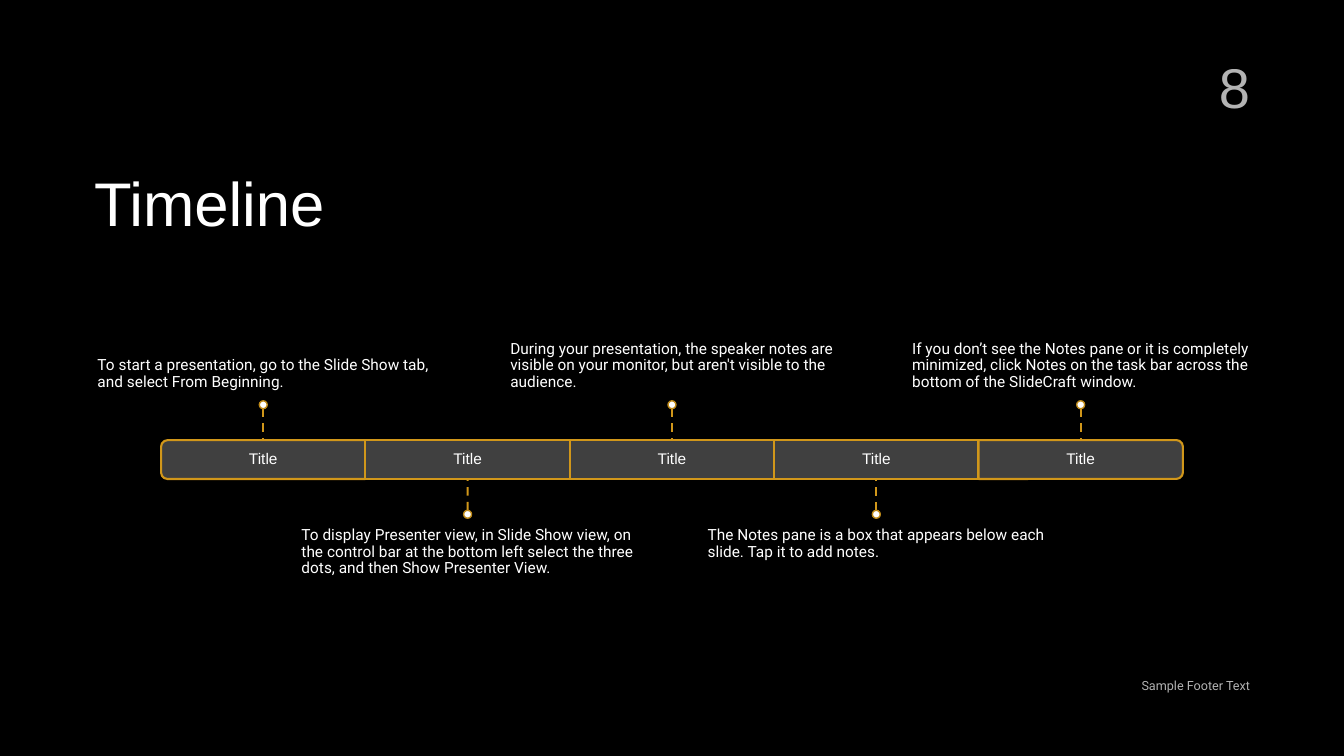
from lxml.etree import SubElement
from pptx import Presentation
from pptx.dml.color import RGBColor
from pptx.enum.dml import MSO_LINE_DASH_STYLE as Dash
from pptx.enum.shapes import MSO_CONNECTOR as Connector, MSO_SHAPE as Shape
from pptx.enum.text import MSO_ANCHOR as Anchor, PP_ALIGN as Align
from pptx.oxml.ns import qn
from pptx.util import Cm, Pt

COLORS = {
    "background": "000000",
    "text": "FFFFFF",
    "bar": "404040",
    "gold": "D1971A",
    "dot_edge": "BE8918",
}
SLIDE_WIDTH, SLIDE_HEIGHT = 33.87, 19.05
STEP_WIDTH, BAR_TOP, BAR_HEIGHT = 5.15, 11.09, 0.98
STEM_LENGTH, DOT_SIZE = 0.79, 0.2
CAPTION_WIDTH, CAPTION_HEIGHT = 8.58, 3.43
CAPTION_TOP_ABOVE, CAPTION_TOP_BELOW = 6.65, 13.06
CAPTION_INSET = 0.23

STEPS = [
    "To start a presentation, go to the Slide Show tab, and select From Beginning.",
    "To display Presenter view, in Slide Show view, on the control bar at the bottom left "
    "select the three dots, and then Show Presenter View.",
    "During your presentation, the speaker notes are visible on your monitor, "
    "but aren't visible to the audience.",
    "The Notes pane is a box that appears below each slide. Tap it to add notes.",
    "If you don’t see the Notes pane or it is completely minimized, click Notes on the "
    "task bar across the bottom of the SlideCraft window.",
]


def rgb(name):
    return RGBColor.from_string(COLORS[name])


def add_text(slide, text, left, top, width, height, *, size, font="Arial", align=Align.LEFT,
             anchor=Anchor.TOP, spacing=1.0, insets=(0.25, 0.13, 0.25, 0.13),
             alpha=None, center_block=False):
    box = slide.shapes.add_textbox(Cm(left), Cm(top), Cm(width), Cm(height))
    frame = box.text_frame
    frame.word_wrap = True
    frame.vertical_anchor = anchor
    (frame.margin_left, frame.margin_top,
     frame.margin_right, frame.margin_bottom) = map(Cm, insets)
    if center_block:
        frame._txBody.bodyPr.set("anchorCtr", "1")
    paragraph = frame.paragraphs[0]
    paragraph.alignment = align
    paragraph.line_spacing = spacing
    run = paragraph.add_run()
    run.text = text
    run.font.name = font
    run.font.size = Pt(size)
    run.font.color.rgb = rgb("text")
    if alpha:
        color = run._r.rPr.find(f"{qn('a:solidFill')}/{qn('a:srgbClr')}")
        SubElement(color, qn("a:alpha")).set("val", str(alpha * 1000))


def add_filled(slide, kind, left, top, width, height, fill, edge, weight):
    shape = slide.shapes.add_shape(kind, Cm(left), Cm(top), Cm(width), Cm(height))
    shape.shadow.inherit = False
    shape.fill.solid()
    shape.fill.fore_color.rgb = rgb(fill)
    shape.line.color.rgb = rgb(edge)
    shape.line.width = Pt(weight)
    return shape


def add_segment(slide, left, rotation):
    if not rotation:
        return add_filled(slide, Shape.RECTANGLE, left, BAR_TOP, STEP_WIDTH, BAR_HEIGHT,
                          "bar", "gold", 1.5)
    shift = (STEP_WIDTH - BAR_HEIGHT) / 2
    end = add_filled(slide, Shape.ROUND_2_SAME_RECTANGLE, left + shift, BAR_TOP - shift,
                     BAR_HEIGHT, STEP_WIDTH, "bar", "gold", 1.5)
    end.rotation = rotation
    return end


def add_stem(slide, center, dot_end, bar_end):
    stem = slide.shapes.add_connector(Connector.STRAIGHT, Cm(center), Cm(dot_end),
                                      Cm(center), Cm(bar_end))
    stem.line.color.rgb = rgb("gold")
    stem.line.width = Pt(1.5)
    stem.line.dash_style = Dash.DASH
    SubElement(stem._element.spPr, qn("a:effectLst"))
    return stem


def add_step(slide, index, caption):
    left = (SLIDE_WIDTH - len(STEPS) * STEP_WIDTH) / 2 + index * STEP_WIDTH
    center = left + STEP_WIDTH / 2
    above = index % 2 == 0
    rotation = {0: 270, len(STEPS) - 1: 90}.get(index, 0)
    if above:
        bar_end, dot_end = BAR_TOP, BAR_TOP - STEM_LENGTH
        dot_top, caption_top = dot_end - DOT_SIZE, CAPTION_TOP_ABOVE
        anchor, insets = Anchor.BOTTOM, (0, 0, 0, CAPTION_INSET)
    else:
        bar_end = BAR_TOP + BAR_HEIGHT
        dot_top = dot_end = bar_end + STEM_LENGTH
        caption_top = CAPTION_TOP_BELOW
        anchor, insets = Anchor.TOP, (0, CAPTION_INSET, 0, 0)

    segment = add_segment(slide, left, rotation)
    add_text(slide, "Title", left, BAR_TOP, STEP_WIDTH, BAR_HEIGHT, size=11,
             align=Align.CENTER, anchor=Anchor.MIDDLE, spacing=0.9,
             insets=(CAPTION_INSET,) * 4)
    add_text(slide, caption, center - CAPTION_WIDTH / 2, caption_top,
             CAPTION_WIDTH, CAPTION_HEIGHT, size=11, font="Roboto", anchor=anchor,
             spacing=0.9, insets=insets, center_block=True)
    stem = add_stem(slide, center, dot_end, bar_end)
    if not rotation:
        stem.end_connect(segment, 0 if above else 2)
    add_filled(slide, Shape.OVAL, center - DOT_SIZE / 2, dot_top, DOT_SIZE, DOT_SIZE,
               "text", "dot_edge", 1)


def main():
    deck = Presentation()
    deck.slide_width, deck.slide_height = Cm(SLIDE_WIDTH), Cm(SLIDE_HEIGHT)
    slide = deck.slides.add_slide(deck.slide_layouts[6])
    slide.background.fill.solid()
    slide.background.fill.fore_color.rgb = rgb("background")

    add_text(slide, "Timeline", 2.12, 4.24, 29.63, 2.41, size=44, spacing=0.9)
    add_text(slide, "8", 25.4, 1.12, 6.35, 2.11, size=40, align=Align.RIGHT,
             anchor=Anchor.MIDDLE, alpha=70)
    for index, caption in enumerate(STEPS):
        add_step(slide, index, caption)
    add_text(slide, "Sample Footer Text", 19.05, 16.94, 12.7, 1.02, size=9, font="Roboto",
             align=Align.RIGHT, alpha=70)
    deck.save("out.pptx")


if __name__ == "__main__":
    main()
